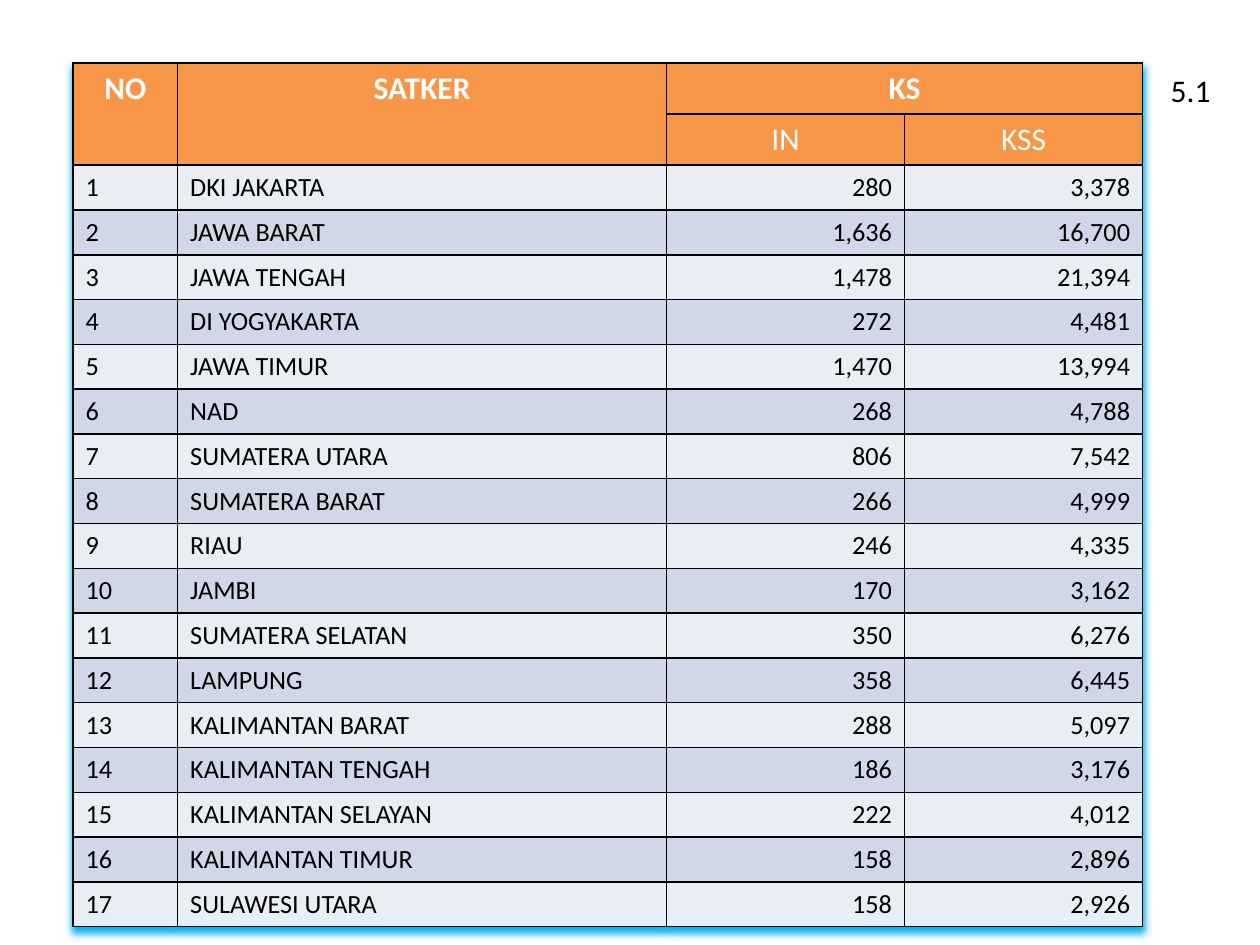
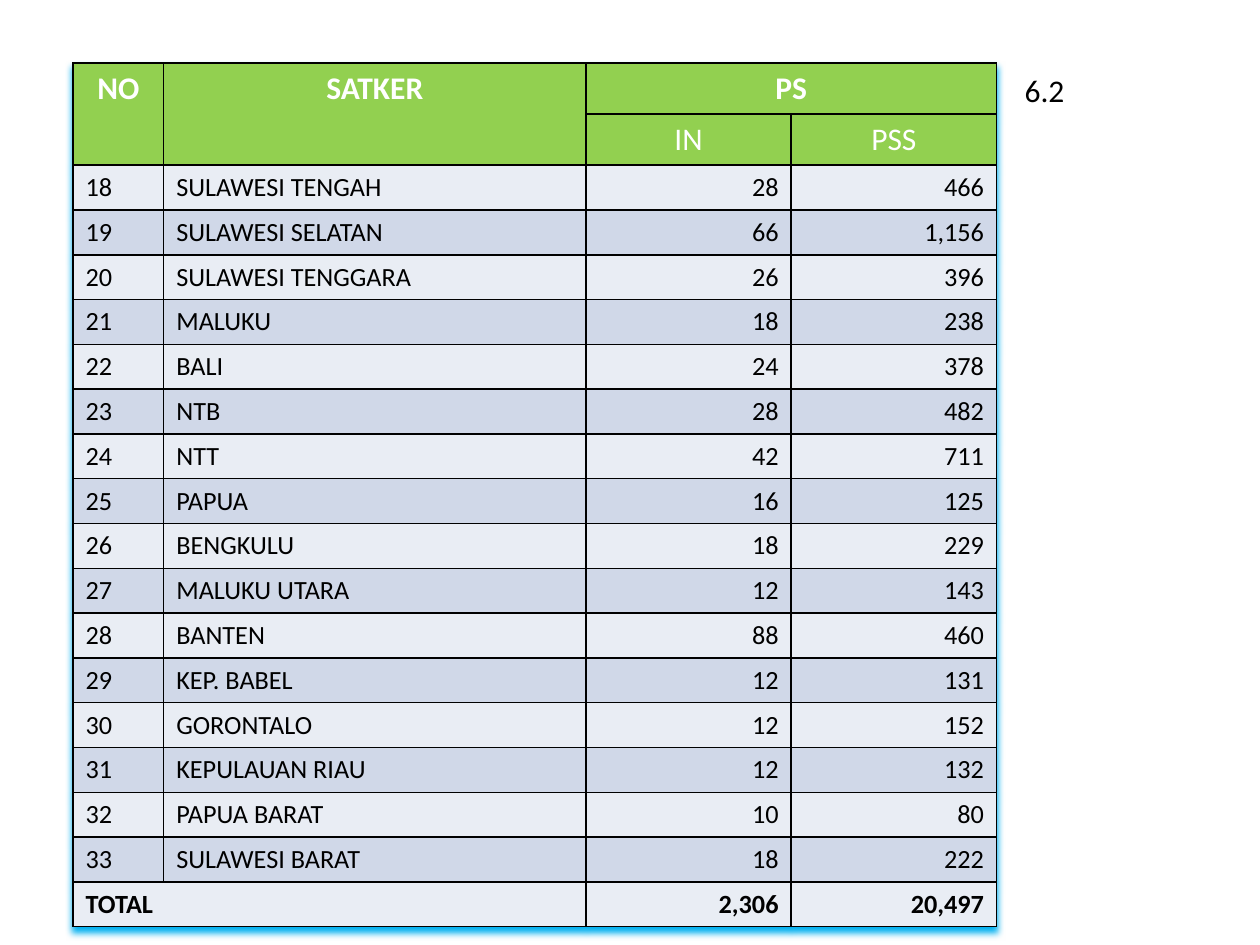
import lxml.etree
import pptx
import pptx.dml.color
import pptx.enum.text
import pptx.oxml.ns
import pptx.util

Inches = pptx.util.Inches
ALIGN = pptx.enum.text.PP_ALIGN

# Each record: satker, IN, second figure
SLIDES = [
    {
        "title": "5.1",
        "group": "KS",
        "second": "KSS",
        "header_color": "F79646",
        "columns": [0.83, 3.88, 1.89, 1.89],
        "first_number": 1,
        "records": [
            ("DKI JAKARTA", 280, 3378),
            ("JAWA BARAT", 1636, 16700),
            ("JAWA TENGAH", 1478, 21394),
            ("DI YOGYAKARTA", 272, 4481),
            ("JAWA TIMUR", 1470, 13994),
            ("NAD", 268, 4788),
            ("SUMATERA UTARA", 806, 7542),
            ("SUMATERA BARAT", 266, 4999),
            ("RIAU", 246, 4335),
            ("JAMBI", 170, 3162),
            ("SUMATERA SELATAN", 350, 6276),
            ("LAMPUNG", 358, 6445),
            ("KALIMANTAN BARAT", 288, 5097),
            ("KALIMANTAN TENGAH", 186, 3176),
            ("KALIMANTAN SELAYAN", 222, 4012),
            ("KALIMANTAN TIMUR", 158, 2896),
            ("SULAWESI UTARA", 158, 2926),
        ],
        "total": None,
    },
    {
        "title": "6.2",
        "group": "PS",
        "second": "PSS",
        "header_color": "92D050",
        "columns": [0.72, 3.35, 1.63, 1.63],
        "first_number": 18,
        "records": [
            ("SULAWESI TENGAH", 28, 466),
            ("SULAWESI SELATAN", 66, 1156),
            ("SULAWESI TENGGARA", 26, 396),
            ("MALUKU", 18, 238),
            ("BALI", 24, 378),
            ("NTB", 28, 482),
            ("NTT", 42, 711),
            ("PAPUA", 16, 125),
            ("BENGKULU", 18, 229),
            ("MALUKU UTARA", 12, 143),
            ("BANTEN", 88, 460),
            ("KEP. BABEL", 12, 131),
            ("GORONTALO", 12, 152),
            ("KEPULAUAN RIAU", 12, 132),
            ("PAPUA BARAT", 10, 80),
            ("SULAWESI BARAT", 18, 222),
        ],
        "total": (2306, 20497),
    },
]

FONT = "Calibri"
BLACK, WHITE = "000000", "FFFFFF"
BAND_COLORS = ["E9EDF4", "D0D8E8"]
SHADOW_COLOR = "00B0F0"
TABLE_LEFT, TABLE_TOP = 0.58, 0.5
HEADER_ROWS = 2
HEADER_HEIGHT, RECORD_HEIGHT = 0.38, 0.33
TITLE_GAP, TITLE_WIDTH, TITLE_HEIGHT = 0.09, 0.58, 0.42
HEADER_ALIGNMENTS = [ALIGN.CENTER] * 4
RECORD_ALIGNMENTS = [ALIGN.LEFT, ALIGN.LEFT, ALIGN.RIGHT, ALIGN.RIGHT]


def rgb(color):
    return pptx.dml.color.RGBColor.from_string(color)


def format_text(text_frame, text, size, color, alignment, bold=False):
    text_frame.text = text
    paragraph = text_frame.paragraphs[0]
    paragraph.alignment = alignment
    for run in paragraph.runs:
        run.font.name = FONT
        run.font.size = pptx.util.Pt(size)
        run.font.bold = bold
        run.font.color.rgb = rgb(color)


def add_color(parent, color):
    fill = lxml.etree.SubElement(parent, pptx.oxml.ns.qn("a:solidFill"))
    lxml.etree.SubElement(fill, pptx.oxml.ns.qn("a:srgbClr"), val=color)


def add_borders(cell):
    properties = cell._tc.get_or_add_tcPr()
    for position, side in enumerate("LRTB"):
        line = properties.makeelement(
            pptx.oxml.ns.qn(f"a:ln{side}"), {"w": str(pptx.util.Pt(1))})
        add_color(line, BLACK)
        properties.insert(position, line)


def add_table_shadow(table):
    properties = table._tbl.tblPr
    effects = properties.makeelement(pptx.oxml.ns.qn("a:effectLst"), {})
    shadow = lxml.etree.SubElement(
        effects, pptx.oxml.ns.qn("a:outerShdw"),
        blurRad=str(pptx.util.Pt(4)), dist=str(pptx.util.Pt(3)),
        dir="5400000", algn="t", rotWithShape="0")
    lxml.etree.SubElement(
        shadow, pptx.oxml.ns.qn("a:srgbClr"), val=SHADOW_COLOR)
    properties.insert(0, effects)


def table_rows(content):
    """Return the text of every row, headers and total included."""
    rows = [["NO", "SATKER", content["group"], ""],
            ["", "", "IN", content["second"]]]
    for number, (satker, *figures) in enumerate(
            content["records"], content["first_number"]):
        rows.append([str(number), satker] + [f"{value:,}" for value in figures])
    if content["total"]:
        rows.append(["TOTAL", ""] + [f"{value:,}" for value in content["total"]])
    return rows


def add_satker_table(slide, content):
    rows = table_rows(content)
    widths = content["columns"]
    heights = [HEADER_HEIGHT if index < HEADER_ROWS else RECORD_HEIGHT
               for index in range(len(rows))]
    table = slide.shapes.add_table(
        len(rows), len(widths), Inches(TABLE_LEFT), Inches(TABLE_TOP),
        Inches(sum(widths)), Inches(sum(heights))).table
    table.first_row = table.horz_banding = False
    for column, width in zip(table.columns, widths):
        column.width = Inches(width)
    for row, height in zip(table.rows, heights):
        row.height = Inches(height)

    last_row = len(rows) - 1
    for row_index, texts in enumerate(rows):
        is_header = row_index < HEADER_ROWS
        is_total = bool(content["total"]) and row_index == last_row
        if is_header:
            fill, size, color = content["header_color"], 18, WHITE
            alignments = HEADER_ALIGNMENTS
        else:
            fill, size, color = BAND_COLORS[row_index % 2], 15, BLACK
            alignments = RECORD_ALIGNMENTS
        for column_index, text in enumerate(texts):
            cell = table.cell(row_index, column_index)
            format_text(cell.text_frame, text, size, color,
                        alignments[column_index], row_index == 0 or is_total)
            cell.fill.solid()
            cell.fill.fore_color.rgb = rgb(fill)
            add_borders(cell)

    for column_index in range(2):
        table.cell(0, column_index).merge(table.cell(1, column_index))
    table.cell(0, 2).merge(table.cell(0, 3))
    if content["total"]:
        table.cell(last_row, 0).merge(table.cell(last_row, 1))
    add_table_shadow(table)


def place_title(slide, content):
    title = slide.shapes.title
    title.left = Inches(TABLE_LEFT + sum(content["columns"]) + TITLE_GAP)
    title.top = Inches(TABLE_TOP)
    title.width, title.height = Inches(TITLE_WIDTH), Inches(TITLE_HEIGHT)
    format_text(title.text_frame, content["title"], 18, BLACK, ALIGN.CENTER)
    title.text_frame.vertical_anchor = pptx.enum.text.MSO_ANCHOR.MIDDLE
    title.text_frame.auto_size = pptx.enum.text.MSO_AUTO_SIZE.NONE


def main():
    presentation = pptx.Presentation()
    presentation.slide_width = Inches(10)
    presentation.slide_height = Inches(7.5)
    title_only = presentation.slide_layouts.get_by_name("Title Only")
    for content in SLIDES:
        slide = presentation.slides.add_slide(title_only)
        place_title(slide, content)
        add_satker_table(slide, content)
    presentation.save("out.pptx")


if __name__ == "__main__":
    main()
